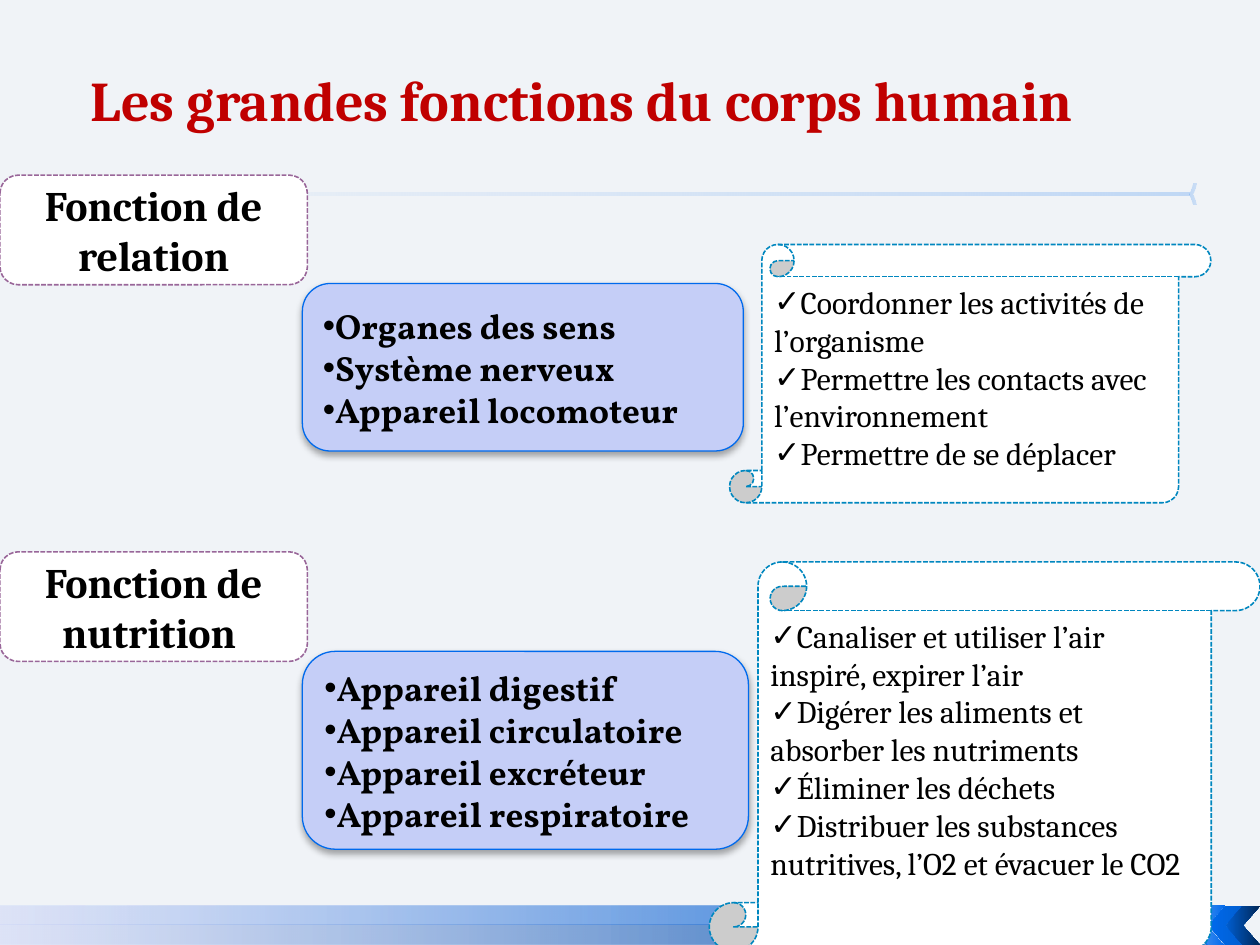
"""Build the slide on the main functions of the human body."""
from lxml import etree
from pptx import Presentation, util as u
from pptx.dml.color import RGBColor
from pptx.enum import dml, shapes, text
from pptx.oxml.ns import qn

rgb = RGBColor.from_string
kinds = shapes.MSO_SHAPE


def fade(shape, *stops):
    shape.shadow.inherit = False
    shape.line.fill.background()
    shape.fill.gradient()
    shape.fill.gradient_angle = 180
    for stop, (place, tint, alpha) in zip(shape.fill.gradient_stops, stops):
        stop.position = place
        stop.color.rgb = rgb(tint)
    marks = shape._element.spPr.iter(qn("a:srgbClr"))
    for mark, (place, tint, alpha) in zip(marks, stops):
        etree.SubElement(mark, qn("a:alpha"), val=str(alpha * 1000))


def panel(kind, at, fill, edge, lines, face, size, bold, mark=None):
    shape = slide.shapes.add_shape(kind, *map(u.Inches, at))
    shape.shadow.inherit = False
    shape.fill.solid()
    shape.fill.fore_color.rgb = rgb(fill)
    shape.line.color.rgb = rgb(edge)
    shape.line.width = u.Pt(0.9)
    frame = shape.text_frame
    frame.word_wrap = True
    for i, line in enumerate(lines):
        para = frame.add_paragraph() if i else frame.paragraphs[0]
        para.text = line
        para.alignment = text.PP_ALIGN.LEFT if mark else text.PP_ALIGN.CENTER
        if mark:
            props = para._p.get_or_add_pPr()
            etree.SubElement(props, qn("a:buFont"), typeface="Arial")
            etree.SubElement(props, qn("a:buChar"), char=mark)
        para.font.name = face
        para.font.size = u.Pt(size)
        para.font.bold = bold
        para.font.color.rgb = rgb("000000")
    return shape


deck = Presentation()
deck.slide_width, deck.slide_height = u.Inches(10), u.Inches(7.5)
slide = deck.slides.add_slide(deck.slide_layouts[5])
slide.background.fill.solid()
slide.background.fill.fore_color.rgb = rgb("F0F3F7")

title = slide.shapes.title
title.left, title.top = u.Inches(0.62), u.Inches(0.47)
title.width, title.height = u.Inches(8.67), u.Inches(0.64)
title.text_frame.text = "Les grandes fonctions du corps humain"
title.text_frame.vertical_anchor = text.MSO_ANCHOR.TOP
para = title.text_frame.paragraphs[0]
para.alignment = text.PP_ALIGN.LEFT
para.font.name = "Cambria"
para.font.size = u.Pt(32)
para.font.bold = True
para.font.color.rgb = rgb("C00000")

for edge, tint in ((7.5, "004EAF"), (7.19, "005ED1")):
    form = slide.shapes.build_freeform(u.Inches(9.58), u.Inches(edge))
    spots = ((0, edge), (0, 7.34), (9.44, 7.34))
    form.add_line_segments([(u.Inches(x), u.Inches(y)) for x, y in spots])
    fade(form.convert_to_shape(), (0.25, tint, 75), (1, "CCD4F8", 50))

arrows = (
    ((9.45, 7.19, 0.27, 0.31), ("006AED", 60), ("006AED", 100)),
    ((9.59, 7.19, 0.27, 0.31), ("006AED", 100), ("005ED1", 100)),
    ((9.73, 7.19, 0.27, 0.31), ("005ED1", 100), ("002757", 100)),
    ((9.44, 1.46, 0.06, 0.16), ("006AED", 20), ("006AED", 15)),
)
for at, first, last in arrows:
    arrow = slide.shapes.add_shape(kinds.CHEVRON, *map(u.Inches, at))
    arrow._element.spPr.xfrm.set("flipH", "1")
    fade(arrow, (0, *first), (1, *last))

rule = slide.shapes.add_shape(
    kinds.RECTANGLE, *map(u.Inches, (2.41, 1.53, 7.03, 0.02)))
fade(rule, (0, "006AED", 20), (1, "006AED", 4))

organs = (
    ((2.4, 2.25, 3.5, 1.33),
     ("Organes des sens", "Système nerveux", "Appareil locomoteur")),
    ((2.4, 5.17, 3.54, 1.57),
     ("Appareil digestif", "Appareil circulatoire", "Appareil excréteur",
      "Appareil respiratoire")),
)
for at, lines in organs:
    card = panel(kinds.ROUNDED_RECTANGLE, at, "C5CEF7", "006AED", lines,
                 "Vollkorn", 20, True, "•")
    card.line.width = u.Pt(0.75)
    glow = etree.SubElement(
        card._element.spPr.find(qn("a:effectLst")), qn("a:outerShdw"),
        blurRad=str(u.Pt(4)), dist=str(u.Pt(2)), dir="5400000", rotWithShape="0")
    tone = etree.SubElement(glow, qn("a:srgbClr"), val="000000")
    etree.SubElement(tone, qn("a:alpha"), val="35000")

for top, name in ((1.39, "Fonction de relation"), (4.38, "Fonction de nutrition ")):
    label = panel(kinds.ROUNDED_RECTANGLE, (0, top, 2.44, 0.87), "FFFFFF",
                  "996699", [name], "Cambria", 24, True)
    label.line.dash_style = dml.MSO_LINE.SQUARE_DOT

roles = (
    ((5.79, 1.94, 3.82, 2.05),
     ("Coordonner les activités de l’organisme",
      "Permettre les contacts avec l’environnement",
      "Permettre de se déplacer")),
    ((5.63, 4.46, 4.37, 3.09),
     ("Canaliser et utiliser l’air inspiré, expirer l’air",
      "Digérer les aliments et absorber les nutriments",
      "Éliminer les déchets",
      "Distribuer les substances nutritives, l’O2 et évacuer le CO2")),
)
for at, lines in roles:
    scroll = panel(kinds.VERTICAL_SCROLL, at, "FFFFFF", "0087BF", lines,
                   "Cambria", 18, False, "✓")
    scroll.line.dash_style = dml.MSO_LINE.SQUARE_DOT
    scroll.text_frame.vertical_anchor = text.MSO_ANCHOR.TOP

deck.save("out.pptx")
